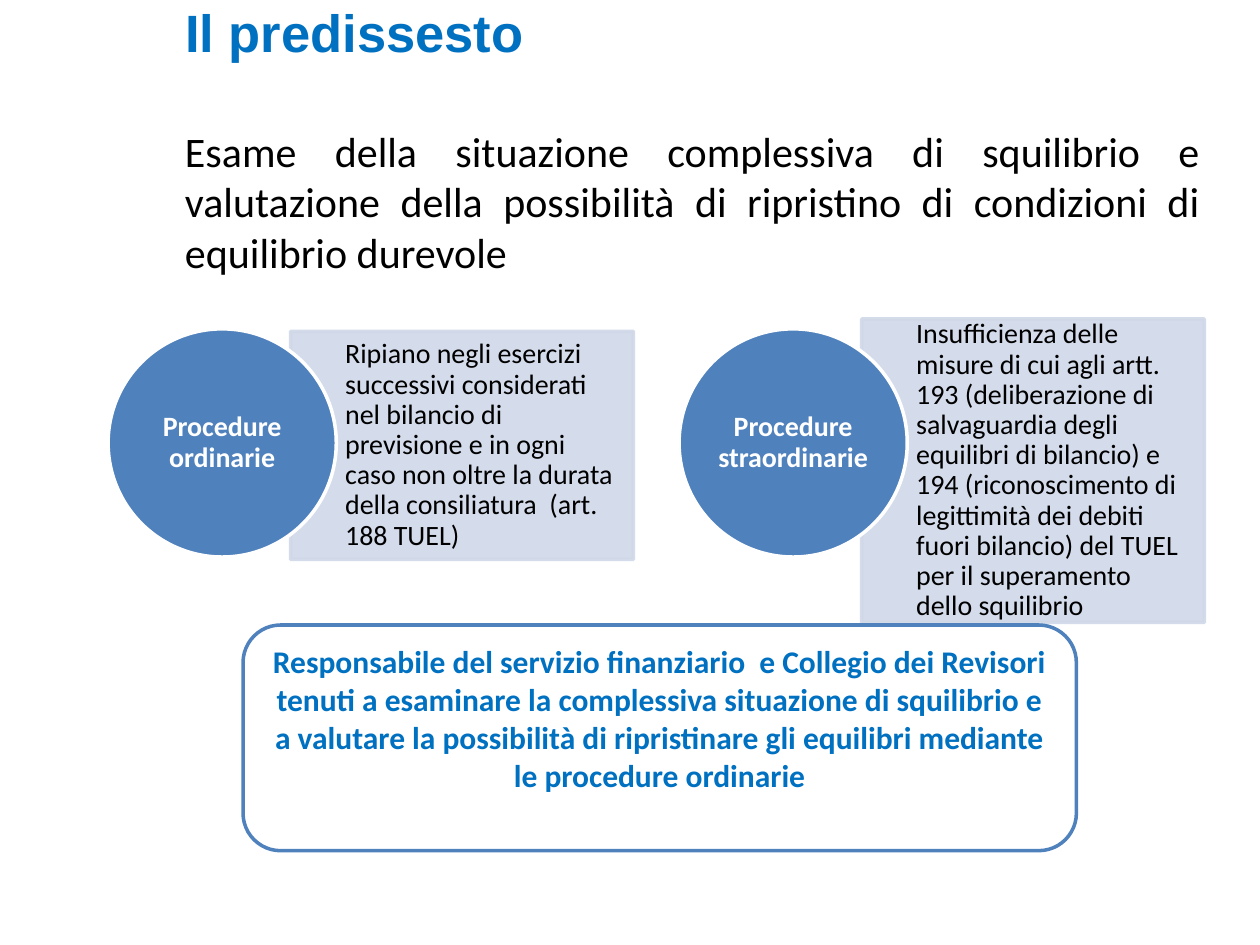
from dataclasses import dataclass

from lxml.etree import SubElement
from pptx import Presentation
from pptx.dml.color import RGBColor
from pptx.enum.shapes import MSO_SHAPE as Shape
from pptx.enum.text import MSO_ANCHOR as Anchor, MSO_AUTO_SIZE as Fit, PP_ALIGN as Align
from pptx.oxml.ns import qn
from pptx.util import Cm, Pt

BLUE = RGBColor(0x00, 0x70, 0xC0)
STEEL = RGBColor(0x4F, 0x81, 0xBD)
PALE = RGBColor(0xD0, 0xD8, 0xE8)
WHITE = RGBColor(0xFF, 0xFF, 0xFF)
BLACK = RGBColor(0x00, 0x00, 0x00)

DISC = 4.6
DISC_TOP = 6.63
CARD_WIDTH = 6.91
CARD_SHIFT = 3.68
PAD = 0.3


@dataclass
class Route:
    name: str
    detail: str
    left: float
    top: float
    height: float


ROUTES = [
    Route("Procedure ordinarie",
          "Ripiano negli esercizi successivi considerati nel bilancio di previsione "
          "e in ogni caso non oltre la durata della consiliatura  (art. 188 TUEL)",
          2.18, 6.68, 4.6),
    Route("Procedure straordinarie",
          "Insufficienza delle misure di cui agli artt. 193 (deliberazione di "
          "salvaguardia degli equilibri di bilancio) e 194 (riconoscimento di "
          "legittimità dei debiti fuori bilancio) del TUEL per il superamento "
          "dello squilibrio",
          13.69, 6.43, 6.12),
]


def add_shape(slide, kind: Shape, box: tuple, fill: RGBColor, line: RGBColor):
    shape = slide.shapes.add_shape(kind, *map(Cm, box))
    shape.shadow.inherit = False
    shape.fill.solid()
    shape.fill.fore_color.rgb = fill
    shape.line.color.rgb = line
    shape.line.width = Pt(2)
    return shape


def write(shape, text: str, size: int, color: RGBColor, align: Align = Align.LEFT,
          anchor: Anchor = Anchor.TOP, bold: bool = False, font: str = "Calibri"):
    frame = shape.text_frame
    frame.word_wrap = True
    frame.auto_size = Fit.NONE
    frame.vertical_anchor = anchor
    para = frame.paragraphs[0]
    para.text = text
    para.alignment = align
    para.font.name = font
    para.font.size = Pt(size)
    para.font.bold = bold
    para.font.color.rgb = color
    return para


def set_insets(shape, left: float, top: float, right: float, bottom: float) -> None:
    frame = shape.text_frame
    frame.margin_left, frame.margin_top = Cm(left), Cm(top)
    frame.margin_right, frame.margin_bottom = Cm(right), Cm(bottom)


def set_alpha(shape, percent: int) -> None:
    """Make fill and line partly transparent."""
    for color in shape._element.spPr.iter(qn("a:srgbClr")):
        SubElement(color, qn("a:alpha")).set("val", str(percent * 1000))


def add_route(slide, route: Route) -> None:
    card = add_shape(slide, Shape.RECTANGLE,
                     (route.left + CARD_SHIFT, route.top, CARD_WIDTH, route.height),
                     PALE, PALE)
    set_alpha(card, 90)
    set_insets(card, 1.1, PAD, PAD, PAD)
    write(card, route.detail, 16, BLACK, anchor=Anchor.MIDDLE).line_spacing = 0.9

    disc = add_shape(slide, Shape.OVAL, (route.left, DISC_TOP, DISC, DISC), STEEL, WHITE)
    set_insets(disc, 0, 0, 0, 0)
    write(disc, route.name, 16, WHITE, Align.CENTER, Anchor.MIDDLE, True).line_spacing = 0.9


def main() -> None:
    deck = Presentation()
    deck.slide_width, deck.slide_height = Cm(25.4), Cm(19.05)
    slide = deck.slides.add_slide(deck.slide_layouts[5])

    title = slide.shapes.title
    title.left, title.top, title.width, title.height = map(Cm, (3.48, 0.05, 20.4, 2.44))
    write(title, "Il predissesto", 30, BLUE, bold=True, font="Arial").line_spacing = Pt(31)

    intro = slide.shapes.add_textbox(*map(Cm, (3.48, 2.4, 20.96, 10.9)))
    write(intro, "Esame della situazione complessiva di squilibrio e valutazione della "
          "possibilità di ripristino di condizioni di equilibrio durevole",
          24, BLACK, Align.JUSTIFY)

    for route in ROUTES:
        add_route(slide, route)

    duty = add_shape(slide, Shape.FLOWCHART_ALTERNATE_PROCESS,
                     (4.9, 12.6, 16.8, 4.55), WHITE, STEEL)
    write(duty, "Responsabile del servizio finanziario  e Collegio dei Revisori tenuti a "
          "esaminare la complessiva situazione di squilibrio e a valutare la possibilità "
          "di ripristinare gli equilibri mediante le procedure ordinarie",
          18, BLUE, Align.CENTER, bold=True)

    deck.save("out.pptx")


if __name__ == "__main__":
    main()
